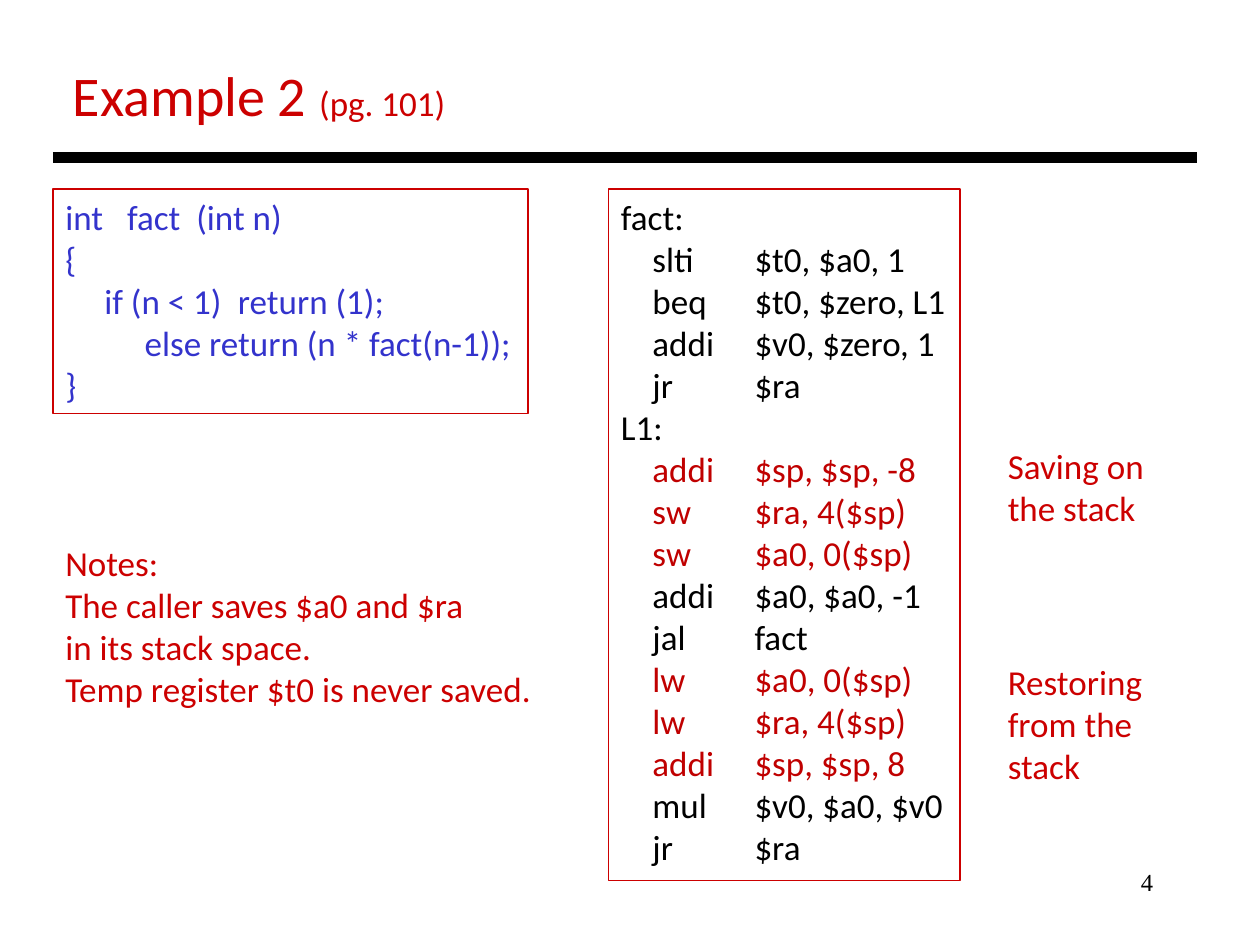
from dataclasses import dataclass

from lxml.etree import SubElement
from pptx import Presentation
from pptx.dml.color import RGBColor
from pptx.enum.shapes import MSO_CONNECTOR, MSO_SHAPE
from pptx.enum.text import MSO_ANCHOR, MSO_AUTO_SIZE, PP_ALIGN
from pptx.oxml.ns import qn
from pptx.util import Inches, Pt

COLORS = {
    "black": "000000",
    "red": "CC0000",
    "dark red": "C00000",
    "blue": "3333CC",
}


@dataclass(frozen=True)
class Span:
    text: str
    color: str = "red"
    size: int = 20
    font: str = "Calibri"


@dataclass(frozen=True)
class Line:
    spans: tuple[Span, ...]
    stops: tuple[float, ...] = ()


@dataclass(frozen=True)
class TextBlock:
    place: tuple[float, float, float, float]
    lines: list[Line]
    framed: bool = False
    wrap: bool = False
    align: PP_ALIGN = PP_ALIGN.LEFT


def rgb(name: str) -> RGBColor:
    return RGBColor.from_string(COLORS[name])


def plain(*texts: str) -> list[Line]:
    return [Line((Span(text),)) for text in texts]


def c_line(text: str, *stops: float) -> Line:
    return Line((Span(text, "blue"),), stops)


def label(name: str) -> Line:
    return Line((Span(f"{name}:", "black"),))


def instruction(name: str, operands: str, color: str = "black") -> Line:
    return Line((Span(f"\t{name}\t{operands}", color),), (0.25, 1.06))


def stack_step(name: str, operands: str) -> Line:
    return instruction(name, operands, "dark red")


def set_tab_stops(paragraph, stops: tuple[float, ...]) -> None:
    tab_list = SubElement(paragraph._p.get_or_add_pPr(), qn("a:tabLst"))
    for stop in stops:
        SubElement(tab_list, qn("a:tab"), pos=str(Inches(stop)), algn="l")


def add_block(page, block: TextBlock) -> None:
    place = [Inches(value) for value in block.place]
    if block.framed:
        box = page.shapes.add_shape(MSO_SHAPE.RECTANGLE, *place)
        box.shadow.inherit = False
        box.fill.background()
        box.line.color.rgb = rgb("red")
        box.line.width = Pt(0.75)
    else:
        box = page.shapes.add_textbox(*place)

    frame = box.text_frame
    frame_format = {
        "word_wrap": block.wrap,
        "auto_size": MSO_AUTO_SIZE.SHAPE_TO_FIT_TEXT,
        "vertical_anchor": MSO_ANCHOR.TOP,
    }
    for name, value in frame_format.items():
        setattr(frame, name, value)

    for index, line in enumerate(block.lines):
        paragraph = frame.add_paragraph() if index else frame.paragraphs[0]
        paragraph.alignment = block.align
        if line.stops:
            set_tab_stops(paragraph, line.stops)
        for span in line.spans:
            run = paragraph.add_run()
            run.text = span.text
            run.font.color.rgb = rgb(span.color)
            for name, value in {"name": span.font, "size": Pt(span.size)}.items():
                setattr(run.font, name, value)


def add_title_rule(page) -> None:
    rule = page.shapes.add_connector(
        MSO_CONNECTOR.STRAIGHT, Inches(0.42), Inches(1.25), Inches(9.5), Inches(1.25)
    )
    rule.line.color.rgb = rgb("black")
    rule.line.width = Pt(6)
    SubElement(rule._element.spPr, qn("a:effectLst"))


C_CODE = [
    c_line("int\tfact\t(int n)", 0.49, 1.04),
    c_line("{"),
    c_line("\tif (n < 1)\treturn (1);", 0.31, 1.37),
    c_line("\telse return (n * fact(n-1));", 0.63),
    c_line("}"),
]

ASSEMBLY = [
    label("fact"),
    instruction("slti", "$t0, $a0, 1"),
    instruction("beq", "$t0, $zero, L1"),
    instruction("addi", "$v0, $zero, 1"),
    instruction("jr", "$ra"),
    label("L1"),
    stack_step("addi", "$sp, $sp, -8"),
    stack_step("sw", "$ra, 4($sp)"),
    stack_step("sw", "$a0, 0($sp)"),
    instruction("addi", "$a0, $a0, -1"),
    instruction("jal", "fact"),
    stack_step("lw", "$a0, 0($sp)"),
    stack_step("lw", "$ra, 4($sp)"),
    stack_step("addi", "$sp, $sp, 8"),
    instruction("mul", "$v0, $a0, $v0"),
    instruction("jr", "$ra"),
]

NOTES = plain(
    "Notes:",
    "The caller saves $a0 and $ra",
    "in its stack space.",
    "Temp register $t0 is never saved.",
)
TITLE = [Line((Span("Example 2 ", size=32), Span("(pg. 101)")))]
PAGE_NUMBER = [Line((Span("4", "black", 14, "Times New Roman"),))]

BLOCKS = [
    TextBlock((7.17, 6.83, 2.08, 0.5), PAGE_NUMBER, wrap=True, align=PP_ALIGN.RIGHT),
    TextBlock((0.42, 1.5, 3.77, 1.78), C_CODE, framed=True),
    TextBlock((4.83, 1.5, 2.79, 5.49), ASSEMBLY, framed=True),
    TextBlock((0.42, 4.25, 3.93, 1.45), NOTES),
    TextBlock((0.48, 0.43, 3.19, 0.64), TITLE),
    TextBlock((7.9, 3.48, 1.35, 0.77), plain("Saving on", "the stack")),
    TextBlock((7.9, 5.19, 1.55, 1.11), plain("Restoring", "from the stack"), wrap=True),
]


def main() -> None:
    deck = Presentation()
    deck.slide_width, deck.slide_height = Inches(10), Inches(7.5)
    page = deck.slides.add_slide(deck.slide_layouts[6])
    add_title_rule(page)
    for block in BLOCKS:
        add_block(page, block)
    deck.save("out.pptx")


if __name__ == "__main__":
    main()
